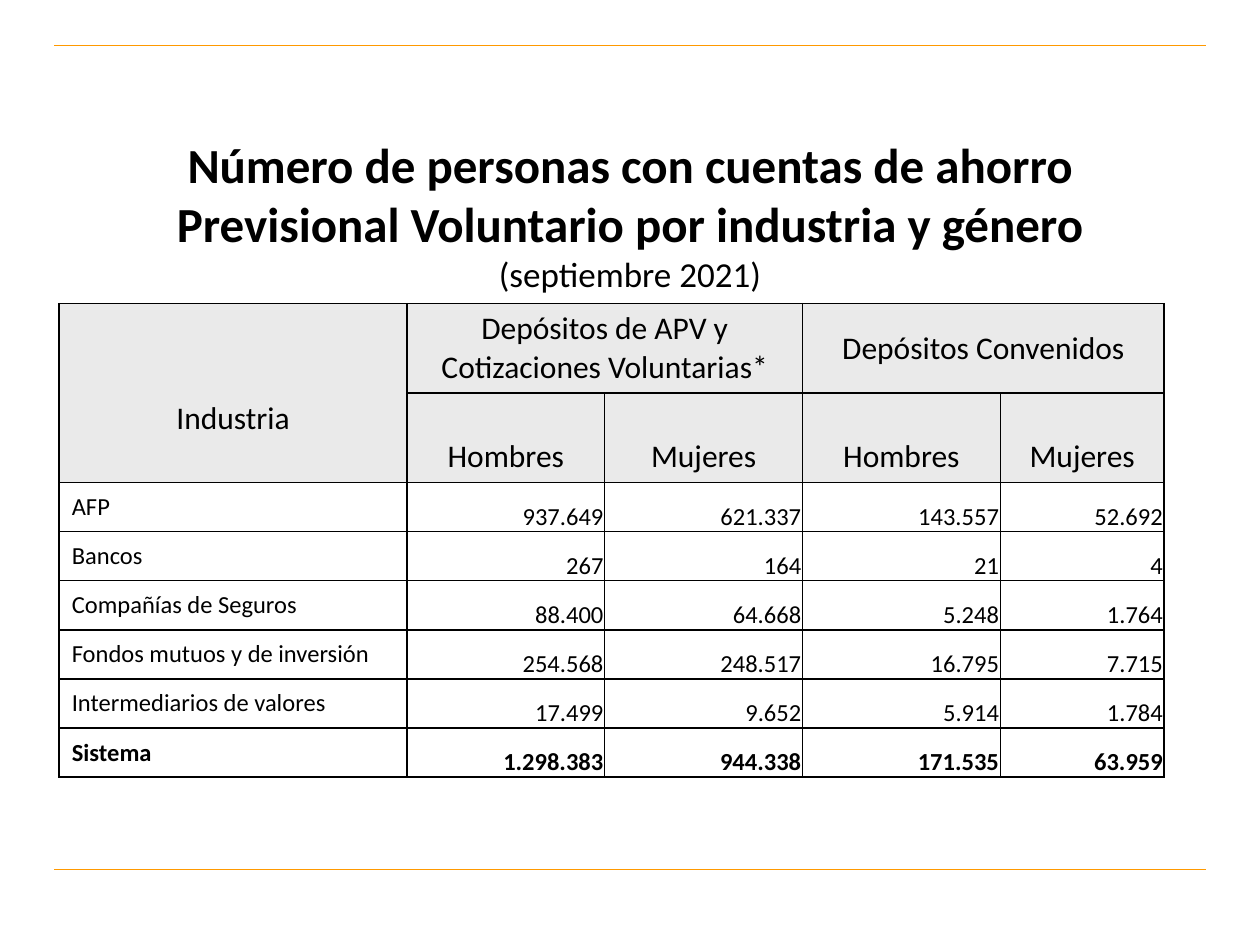
"""Builds a slide with a table of voluntary savers by industry and gender."""
from lxml.etree import SubElement
from pptx import Presentation
from pptx.dml.color import RGBColor
from pptx.enum.shapes import MSO_CONNECTOR
from pptx.enum.text import MSO_ANCHOR, PP_ALIGN
from pptx.oxml.ns import qn
from pptx.util import Inches, Pt

TITLE = "Número de personas con cuentas de ahorro Previsional Voluntario por industria y género"
DATE = "(septiembre 2021)"
GROUPS = ["Depósitos de APV y Cotizaciones Voluntarias*", "Depósitos Convenidos"]
GENDERS = ["Hombres", "Mujeres"]
DATA = [
    ("AFP", "937.649", "621.337", "143.557", "52.692"),
    ("Bancos", "267", "164", "21", "4"),
    ("Compañías de Seguros", "88.400", "64.668", "5.248", "1.764"),
    ("Fondos mutuos y de inversión", "254.568", "248.517", "16.795", "7.715"),
    ("Intermediarios de valores", "17.499", "9.652", "5.914", "1.784"),
    ("Sistema", "1.298.383", "944.338", "171.535", "63.959"),
]
COLS = [2.76, 1.57, 1.57, 1.57, 1.3]
ROWS = [0.71] * 2 + [0.39] * len(DATA)
GREY, WHITE, BLACK, ORANGE = "EAEAEA", "FFFFFF", "000000", "FF9900"
WIDE, TIGHT = (0.1, 0.05, 0.1, 0.05), (0.01, 0.01, 0.01, 0)
RAISED = (0.1, 0.05, 0.1, 0.35)
MID, LOW = MSO_ANCHOR.MIDDLE, MSO_ANCHOR.BOTTOM


def color(code):
    return RGBColor.from_string(code)


def write(para, text, size, bold=False):
    run = para.add_run()
    run.text = text
    font = run.font
    font.name, font.size, font.bold = "Calibri", Pt(size), bold
    font.color.rgb = color(BLACK)


def rule(slide, y):
    line = slide.shapes.add_connector(
        MSO_CONNECTOR.STRAIGHT, Inches(0.43), Inches(y), Inches(9.57), Inches(y))
    line.line.color.rgb = color(ORANGE)
    line.line.width = Pt(0.75)
    SubElement(line._element.spPr, qn("a:effectLst"))


def border(cell):
    props = cell._tc.get_or_add_tcPr()
    for at, side in enumerate(("lnL", "lnR", "lnT", "lnB")):
        edge = props.makeelement(qn("a:" + side), {"w": str(Pt(1))})
        fill = SubElement(edge, qn("a:solidFill"))
        SubElement(fill, qn("a:srgbClr"), val=BLACK)
        props.insert(at, edge)


def put(cell, text, size, align, anchor, pad, bold=False):
    cell.margin_left, cell.margin_top, cell.margin_right, cell.margin_bottom = map(Inches, pad)
    cell.vertical_anchor = anchor
    para = cell.text_frame.paragraphs[0]
    para.alignment = align
    write(para, text, size, bold)


def heading(slide):
    box = slide.shapes.add_textbox(Inches(0.5), Inches(1.15), Inches(9), Inches(1.1))
    frame = box.text_frame
    frame.word_wrap = True
    frame.vertical_anchor = MID
    para = frame.paragraphs[0]
    para.alignment = PP_ALIGN.CENTER
    write(para, TITLE, 28, True)
    para.add_line_break()
    write(para, DATE, 20)


def grid(slide):
    table = slide.shapes.add_table(
        len(ROWS), len(COLS), Inches(0.47), Inches(2.41),
        Inches(sum(COLS)), Inches(sum(ROWS))).table
    for col, width in zip(table.columns, COLS):
        col.width = Inches(width)
    for row, height in zip(table.rows, ROWS):
        row.height = Inches(height)
    for r in range(len(ROWS)):
        for c in range(len(COLS)):
            cell = table.cell(r, c)
            cell.fill.solid()
            cell.fill.fore_color.rgb = color(GREY if r < 2 else WHITE)
            border(cell)

    center = PP_ALIGN.CENTER
    table.cell(0, 0).merge(table.cell(1, 0))
    put(table.cell(0, 0), "Industria", 18, center, LOW, RAISED)
    for i, group in enumerate(GROUPS):
        left = 1 + 2 * i
        table.cell(0, left).merge(table.cell(0, left + 1))
        put(table.cell(0, left), group, 18, center, MID, WIDE)
        for j, gender in enumerate(GENDERS):
            put(table.cell(1, left + j), gender, 18, center, LOW, WIDE)

    for r, (name, *counts) in enumerate(DATA, 2):
        bold = r == len(ROWS) - 1
        put(table.cell(r, 0), name, 14, PP_ALIGN.LEFT, MID, WIDE, bold)
        for c, count in enumerate(counts, 1):
            put(table.cell(r, c), count, 14, PP_ALIGN.RIGHT, LOW, TIGHT, bold)


def main():
    deck = Presentation()
    deck.slide_width, deck.slide_height = Inches(10), Inches(7.5)
    slide = deck.slides.add_slide(deck.slide_layouts[6])
    for y in (0.36, 6.9):
        rule(slide, y)
    heading(slide)
    grid(slide)
    deck.save("out.pptx")


if __name__ == "__main__":
    main()
